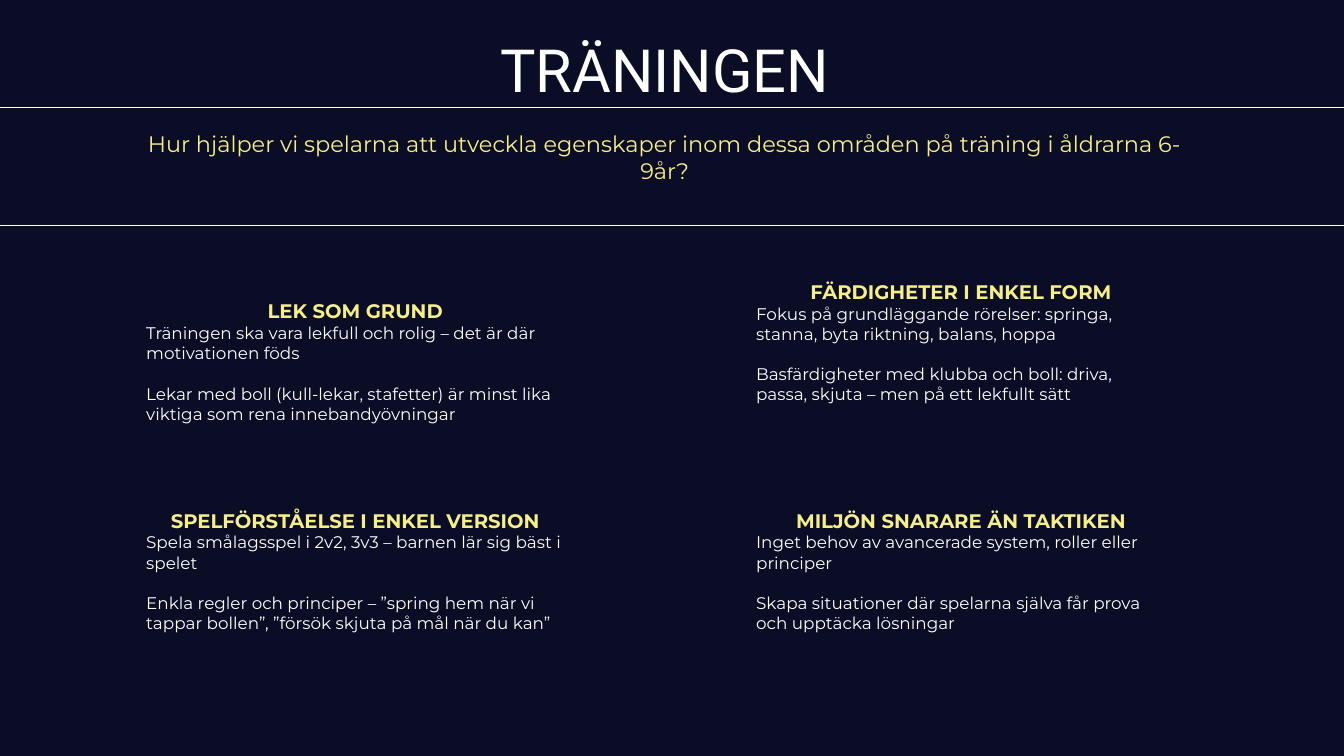
from lxml import etree
from pptx import Presentation
from pptx.dml.color import RGBColor
from pptx.enum.shapes import MSO_CONNECTOR, MSO_SHAPE
from pptx.enum.text import MSO_ANCHOR, MSO_AUTO_SIZE, PP_ALIGN
from pptx.oxml.ns import qn
from pptx.util import Inches, Pt

NAVY = RGBColor(0x0B, 0x0C, 0x26)
WHITE = RGBColor(0xFF, 0xFF, 0xFF)
YELLOW = RGBColor(0xF5, 0xEF, 0x88)
TOP, MIDDLE = MSO_ANCHOR.TOP, MSO_ANCHOR.MIDDLE
LEFT, CENTER = PP_ALIGN.LEFT, PP_ALIGN.CENTER
NO_AUTOFIT = MSO_AUTO_SIZE.NONE
ROUNDED = MSO_SHAPE.ROUNDED_RECTANGLE
STRAIGHT = MSO_CONNECTOR.STRAIGHT

SLIDE_WIDTH, SLIDE_HEIGHT = 26.66, 15
CARD_HEIGHT = 4.33
LEFT_COLUMN = (2.59, 8.91)
RIGHT_COLUMN = (14.69, 8.74)
LOWER_ROW = 9.16
RULE_POSITIONS = (2.13, 4.47)

TITLE = "TRÄNINGEN"
QUESTION = ("Hur hjälper vi spelarna att utveckla egenskaper inom dessa "
            "områden på träning i åldrarna 6-9år?")

# Column, top, anchor, heading, body paragraphs
CARDS = [
    (LEFT_COLUMN, 5.01, MIDDLE, "LEK SOM GRUND", [
        "Träningen ska vara lekfull och rolig – det är där motivationen föds",
        "Lekar med boll (kull-lekar, stafetter) är minst lika viktiga som "
        "rena innebandyövningar"]),
    (LEFT_COLUMN, LOWER_ROW, MIDDLE, "SPELFÖRSTÅELSE I ENKEL VERSION", [
        "Spela smålagsspel i 2v2, 3v3 – barnen lär sig bäst i spelet",
        "Enkla regler och principer – ”spring hem när vi tappar bollen”, "
        "”försök skjuta på mål när du kan”"]),
    (RIGHT_COLUMN, 5.29, TOP, "FÄRDIGHETER I ENKEL FORM", [
        "Fokus på grundläggande rörelser: springa, stanna, byta riktning, "
        "balans, hoppa",
        "Basfärdigheter med klubba och boll: driva, passa, skjuta – men på "
        "ett lekfullt sätt"]),
    (RIGHT_COLUMN, LOWER_ROW, MIDDLE, "MILJÖN SNARARE ÄN TAKTIKEN", [
        "Inget behov av avancerade system, roller eller principer",
        "Skapa situationer där spelarna själva får prova och upptäcka "
        "lösningar"]),
]


def write(paragraph, text, size, color, font="Montserrat", bold=False,
          align=LEFT, space_before=0):
    paragraph.alignment = align
    if space_before:
        paragraph.space_before = Pt(space_before)
    run = paragraph.add_run()
    run.text = text
    run.font.name = font
    run.font.size = Pt(size)
    run.font.bold = bold
    run.font.color.rgb = color


def add_header(slide, left, top, width, height):
    title = slide.shapes.title
    title.left, title.top = Inches(left), Inches(top)
    title.width, title.height = Inches(width), Inches(height)
    frame = title.text_frame
    frame.word_wrap = True
    frame.auto_size = NO_AUTOFIT
    frame.vertical_anchor = MIDDLE
    write(frame.paragraphs[0], TITLE, 85, WHITE, font="Roboto", align=CENTER)
    write(frame.add_paragraph(), QUESTION, 32, YELLOW, align=CENTER,
          space_before=36)


def add_rule(slide, top):
    """Draw a thin line across the full slide width."""
    rule = slide.shapes.add_connector(
        STRAIGHT, Inches(0), Inches(top), Inches(SLIDE_WIDTH), Inches(top))
    rule.line.color.rgb = WHITE
    rule.line.width = Pt(0.5)
    etree.SubElement(rule._element.spPr, qn("a:effectLst"))


def add_card(slide, left, top, width, height, anchor, heading, body):
    card = slide.shapes.add_shape(
        ROUNDED, Inches(left), Inches(top), Inches(width), Inches(height))
    card.shadow.inherit = False
    card.fill.background()
    card.line.fill.background()
    frame = card.text_frame
    frame.word_wrap = True
    frame.vertical_anchor = anchor
    write(frame.paragraphs[0], heading, 28, YELLOW, bold=True, align=CENTER)
    for index, text in enumerate(body):
        write(frame.add_paragraph(), text, 24, WHITE,
              space_before=29 if index else 0)


def main():
    presentation = Presentation()
    presentation.slide_width = Inches(SLIDE_WIDTH)
    presentation.slide_height = Inches(SLIDE_HEIGHT)
    slide = presentation.slides.add_slide(presentation.slide_layouts[5])
    slide.background.fill.solid()
    slide.background.fill.fore_color.rgb = NAVY

    add_header(slide, 2.59, 0.49, 21.19, 3.32)
    for top in RULE_POSITIONS:
        add_rule(slide, top)
    for (left, width), top, anchor, heading, body in CARDS:
        add_card(slide, left, top, width, CARD_HEIGHT, anchor, heading, body)
    presentation.save("out.pptx")


if __name__ == "__main__":
    main()
